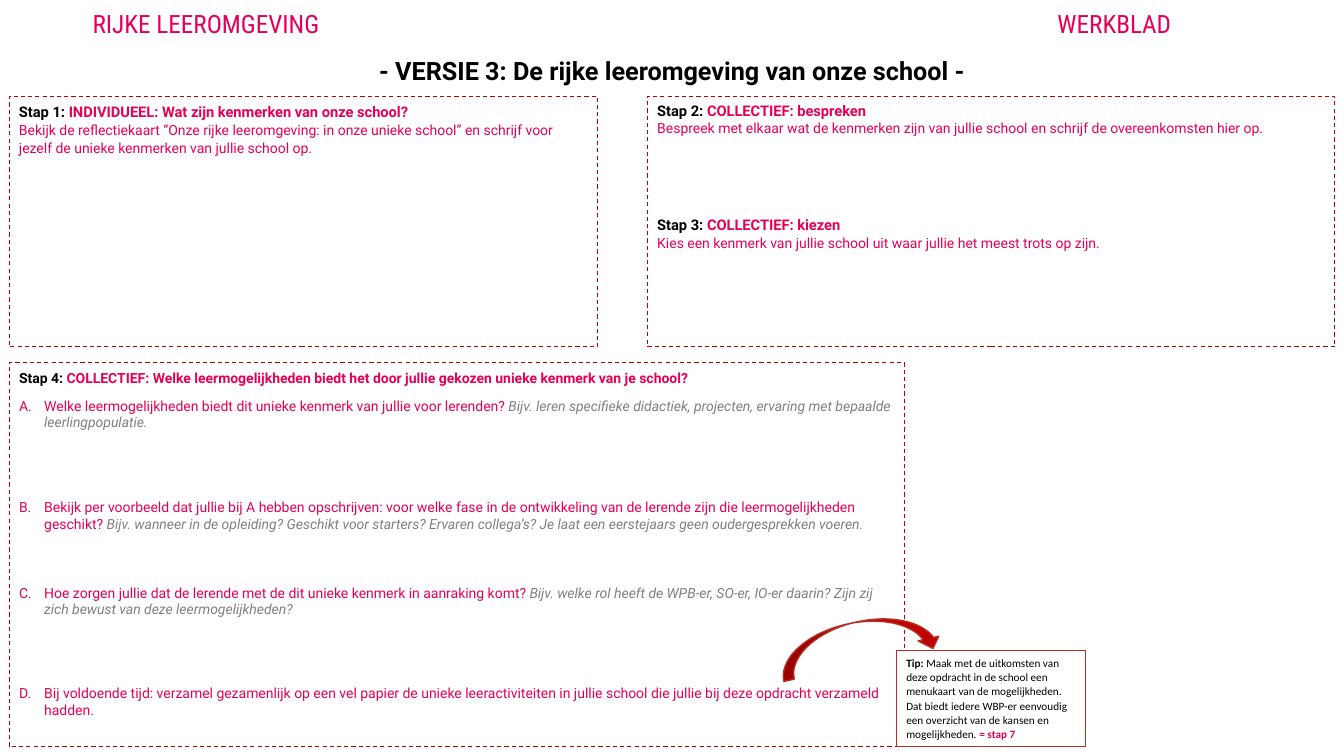
from dataclasses import dataclass, field
from typing import Optional

import lxml.etree
import pptx
import pptx.dml.color
import pptx.enum.dml
import pptx.enum.shapes
import pptx.enum.text
import pptx.oxml.ns
import pptx.util

RGBColor = pptx.dml.color.RGBColor
PINK = RGBColor(0xE5, 0x00, 0x56)
BLACK = RGBColor(0x00, 0x00, 0x00)
WHITE = RGBColor(0xFF, 0xFF, 0xFF)
GREY = RGBColor(0x80, 0x80, 0x80)
DARK_RED = RGBColor(0xC0, 0x00, 0x00)
BRICK = RGBColor(0xB8, 0x2D, 0x1F)

LEFT = pptx.enum.text.PP_ALIGN.LEFT
CENTER = pptx.enum.text.PP_ALIGN.CENTER
SHAPES = pptx.enum.shapes.MSO_SHAPE
EMU_PER_PX = 9144  # 100 px to the inch
INDENT = 25
HEADER_TAB = 957


@dataclass(frozen=True)
class Words:
    text: str
    color: RGBColor = PINK
    size: float = 10
    bold: bool = False
    italic: bool = False
    font: str = "Roboto"


@dataclass(frozen=True)
class Line:
    words: list[Words]
    spacing: float = 1.07
    before: float = 0
    align: int = LEFT
    lettered: bool = False
    tab: Optional[int] = None


@dataclass(frozen=True)
class Box:
    left: int
    top: int
    width: int
    height: int
    lines: list[Line] = field(default_factory=list)
    outline: Optional[RGBColor] = DARK_RED
    dashed: bool = True
    grows: bool = False


def px(length: int) -> pptx.util.Emu:
    return pptx.util.Emu(length * EMU_PER_PX)


def heading(step: str, title: str, size: float = 10.5, **layout) -> Line:
    return Line([Words(step, BLACK, size, True), Words(title, PINK, size, True)], **layout)


def question(before: float, text: str, example: str = "") -> Line:
    words = [Words(text)]
    if example:
        words.append(Words(example, GREY, italic=True))
    return Line(words, spacing=1.0, before=before, lettered=True)


def write_line(paragraph, line: Line) -> None:
    properties = paragraph._p.get_or_add_pPr()
    qualified = pptx.oxml.ns.qn
    if line.lettered:
        properties.set("marL", str(px(INDENT)))
        properties.set("indent", str(-px(INDENT)))
        lxml.etree.SubElement(properties, qualified("a:buAutoNum"), type="alphaUcPeriod")
    if line.tab is not None:
        tabs = lxml.etree.SubElement(properties, qualified("a:tabLst"))
        lxml.etree.SubElement(tabs, qualified("a:tab"), pos=str(px(line.tab)), algn="l")
    paragraph.alignment = line.align
    paragraph.line_spacing = line.spacing
    if line.before:
        paragraph.space_before = pptx.util.Pt(line.before)
    for words in line.words:
        run = paragraph.add_run()
        run.text = words.text
        run.font.name = words.font
        run.font.size = pptx.util.Pt(words.size)
        run.font.bold = words.bold
        run.font.italic = words.italic
        run.font.color.rgb = words.color


def write_lines(frame, lines: list[Line]) -> None:
    frame.word_wrap = True
    frame.vertical_anchor = pptx.enum.text.MSO_ANCHOR.TOP
    for index, line in enumerate(lines):
        paragraph = frame.add_paragraph() if index else frame.paragraphs[0]
        write_line(paragraph, line)


def draw_box(slide, box: Box) -> None:
    shape = slide.shapes.add_shape(
        SHAPES.RECTANGLE, px(box.left), px(box.top), px(box.width), px(box.height))
    shape.shadow.inherit = False
    shape.fill.solid()
    shape.fill.fore_color.rgb = WHITE
    if box.outline is None:
        shape.line.fill.background()
    else:
        shape.line.color.rgb = box.outline
        shape.line.width = pptx.util.Pt(0.75)
        if box.dashed:
            shape.line.dash_style = pptx.enum.dml.MSO_LINE.DASH
    write_lines(shape.text_frame, box.lines)
    if box.grows:
        shape.text_frame.auto_size = pptx.enum.text.MSO_AUTO_SIZE.SHAPE_TO_FIT_TEXT


def draw_header(slide) -> None:
    header = slide.shapes.add_textbox(px(82), px(0), px(1144), px(64))
    words = Words("RIJKE LEEROMGEVING\tWERKBLAD", size=18, font="Roboto Condensed")
    write_lines(header.text_frame, [Line([words], spacing=1.1, tab=HEADER_TAB)])


def draw_arrow(slide) -> None:
    arrow = slide.shapes.add_shape(
        SHAPES.CURVED_DOWN_ARROW, px(771), px(617), px(162), px(42))
    arrow.rotation = 347.5
    arrow.shadow.inherit = False
    arrow.fill.solid()
    arrow.fill.fore_color.rgb = DARK_RED
    arrow.line.color.rgb = BRICK
    arrow.line.width = pptx.util.Pt(1)


TITLE = Box(126, 48, 1081, 32, [
    Line([Words("- VERSIE 3: De rijke leeromgeving van onze school -", BLACK, 18, True)],
         align=CENTER),
], outline=None)

STEPS = [
    Box(9, 96, 584, 248, [
        heading("Stap 1: ", "INDIVIDUEEL: Wat zijn kenmerken van onze school?"),
        Line([Words("Bekijk de reflectiekaart “Onze rijke leeromgeving: in onze unieke school” "
                    "en schrijf voor jezelf de unieke kenmerken van jullie school op.")]),
    ]),
    Box(642, 96, 682, 248, [
        heading("Stap 2: ", "COLLECTIEF: bespreken", spacing=1.0),
        Line([Words("Bespreek met elkaar wat de kenmerken zijn van jullie school en schrijf "
                    "de overeenkomsten hier op"), Words(".", DARK_RED)], spacing=1.0),
        heading("Stap 3: ", "COLLECTIEF: kiezen", before=56),
        Line([Words("Kies een kenmerk van jullie school uit waar jullie het meest trots "
                    "op zijn.")]),
    ]),
    Box(9, 360, 888, 381, [
        heading("Stap 4: ", "COLLECTIEF: Welke leermogelijkheden biedt het door jullie "
                "gekozen unieke kenmerk van je school?", size=10),
        question(8, "Welke leermogelijkheden biedt dit unieke kenmerk van jullie voor "
                 "lerenden? ",
                 "Bijv. leren specifieke didactiek, projecten, ervaring met bepaalde "
                 "leerlingpopulatie."),
        question(48.5, "Bekijk per voorbeeld dat jullie bij A hebben opschrijven: voor welke "
                 "fase in de ontwikkeling van de lerende zijn die leermogelijkheden geschikt? ",
                 "Bijv. wanneer in de opleiding? Geschikt voor starters? Ervaren collega’s? "
                 "Je laat een eerstejaars geen oudergesprekken voeren."),
        question(37, "Hoe zorgen jullie dat de lerende met de dit unieke kenmerk in "
                 "aanraking komt? ",
                 "Bijv. welke rol heeft de WPB-er, SO-er, IO-er daarin? Zijn zij zich bewust "
                 "van deze leermogelijkheden?"),
        question(48, "Bij voldoende tijd: verzamel gezamenlijk op een vel papier de unieke "
                 "leeractiviteiten in jullie school die jullie bij deze opdracht verzameld "
                 "hadden."),
    ]),
]

TIP = Box(889, 645, 188, 96, [
    Line([
        Words("Tip: ", BLACK, 8, True, font="Calibri"),
        Words("Maak met de uitkomsten van deze opdracht in de school een menukaart van de "
              "mogelijkheden. Dat biedt iedere WBP-er eenvoudig een overzicht van de kansen "
              "en mogelijkheden. ", BLACK, 8, font="Calibri"),
        Words("= stap 7", PINK, 8, True, font="Calibri"),
    ]),
], outline=BRICK, dashed=False, grows=True)


def main() -> None:
    presentation = pptx.Presentation()
    presentation.slide_width = px(1333)
    presentation.slide_height = px(750)
    slide = presentation.slides.add_slide(presentation.slide_layouts[6])

    # Header and title
    draw_header(slide)
    draw_box(slide, TITLE)

    # Worksheet steps
    for step in STEPS:
        draw_box(slide, step)

    # Arrow leading to the tip
    draw_arrow(slide)
    draw_box(slide, TIP)

    presentation.save("out.pptx")


if __name__ == "__main__":
    main()
